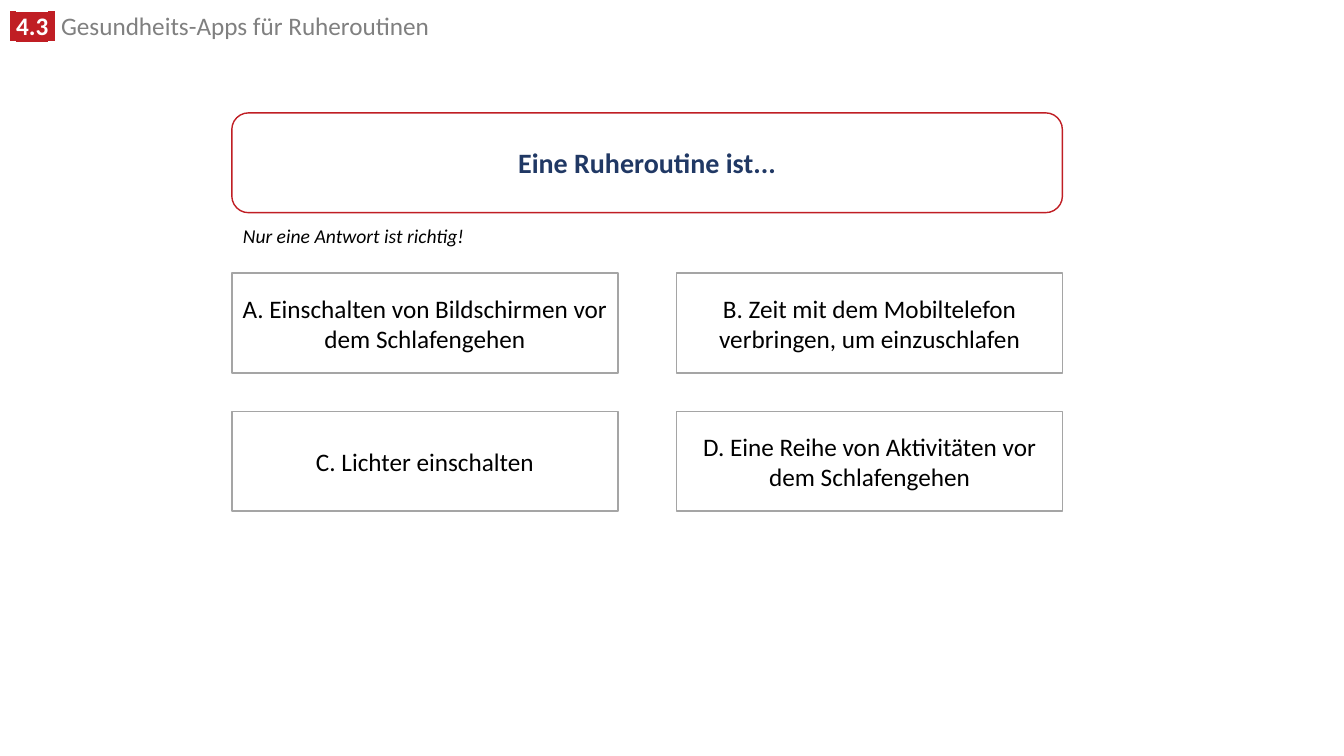
"""Build a quiz slide with one question and four possible answers."""
from lxml.etree import SubElement
from pptx import Presentation
from pptx.dml.color import RGBColor
from pptx.enum.shapes import MSO_SHAPE as Preset
from pptx.enum.text import MSO_ANCHOR as Anchor, MSO_AUTO_SIZE as AutoSize, PP_ALIGN as Align
from pptx.oxml.ns import qn
from pptx.util import Inches, Pt

COLORS = {
    "white": "FFFFFF", "black": "000000", "red": "C01E24",
    "navy": "203864", "gray": "808080", "border": "A5A5A5",
}
FORMATS = {
    "badge": {"color": "white", "size": Pt(18), "bold": True},
    "title": {"color": "gray", "size": Pt(18), "bold": False},
    "question": {"color": "navy", "size": Pt(20), "bold": True},
    "answer": {"color": "black", "size": Pt(18)},
    "note": {"color": "black", "size": Pt(14), "italic": True},
}
TITLE_RUNS = [
    (" ", "badge", "Lato"),
    ("4.3", "badge", "Calibri"),
    (" ", "badge", "Lato"),
    (" ", "title", "Lato"),
    ("Gesundheits-Apps für Ruheroutinen", "title", "Calibri"),
]
ANSWERS = [
    "A. Einschalten von Bildschirmen vor dem Schlafengehen",
    "B. Zeit mit dem Mobiltelefon verbringen, um einzuschlafen",
    "C. Lichter einschalten",
    "D. Eine Reihe von Aktivitäten vor dem Schlafengehen",
]
LEFT, QUESTION_TOP, ANSWER_TOP = 17.25, 14.93, 36.13
QUESTION_WIDTH, ANSWER_WIDTH, BOX_HEIGHT = 61.8, 28.73, 13.2
COLUMN_STEP, ROW_STEP = 33.09, 18.27


class QuizSlide:
    """Draws styled elements placed in percent of the slide size."""

    def __init__(self, presentation):
        self.width = presentation.slide_width
        self.height = presentation.slide_height
        self.slide = presentation.slides.add_slide(presentation.slide_layouts[5])

    def frame(self, left, top, width, height):
        return (
            int(self.width * left / 100), int(self.height * top / 100),
            int(self.width * width / 100), int(self.height * height / 100),
        )

    def run(self, paragraph, text, style, typeface="Calibri"):
        run = paragraph.add_run()
        run.text = text
        run.font.name = typeface
        for name, value in FORMATS[style].items():
            if name == "color":
                run.font.color.rgb = RGBColor.from_string(COLORS[value])
            else:
                setattr(run.font, name, value)
        return run

    def highlight(self, run, color):
        properties = run.font._element
        mark = SubElement(properties, qn("a:highlight"))
        SubElement(mark, qn("a:srgbClr"), val=COLORS[color])
        properties.find(qn("a:solidFill")).addnext(mark)

    def title(self, runs, *place):
        shape = self.slide.shapes.title
        shape.left, shape.top, shape.width, shape.height = self.frame(*place)
        text_frame = shape.text_frame
        text_frame.vertical_anchor = Anchor.TOP
        text_frame.auto_size = AutoSize.SHAPE_TO_FIT_TEXT
        paragraph = text_frame.paragraphs[0]
        paragraph.alignment = Align.LEFT
        paragraph.line_spacing = 0.8
        paragraph.space_before = Pt(0)
        for text, style, typeface in runs:
            run = self.run(paragraph, text, style, typeface)
            if style == "badge":
                self.highlight(run, "red")

    def box(self, preset, text, style, border, *place):
        shape = self.slide.shapes.add_shape(preset, *self.frame(*place))
        shape.shadow.inherit = False
        shape.fill.solid()
        shape.fill.fore_color.rgb = RGBColor.from_string(COLORS["white"])
        shape.line.color.rgb = RGBColor.from_string(COLORS[border])
        shape.line.width = Pt(1)
        shape.text_frame.vertical_anchor = Anchor.MIDDLE
        paragraph = shape.text_frame.paragraphs[0]
        paragraph.alignment = Align.CENTER
        self.run(paragraph, text, style)

    def note(self, text, *place):
        shape = self.slide.shapes.add_textbox(*self.frame(*place))
        shape.text_frame.word_wrap = False
        shape.text_frame.auto_size = AutoSize.SHAPE_TO_FIT_TEXT
        self.run(shape.text_frame.paragraphs[0], text, "note")


def main():
    presentation = Presentation()
    presentation.slide_width = Inches(13.33)
    presentation.slide_height = Inches(7.5)
    quiz = QuizSlide(presentation)
    quiz.title(TITLE_RUNS, 0, 1.47, 71.42, 4.67)
    quiz.box(Preset.ROUNDED_RECTANGLE, "Eine Ruheroutine ist...", "question", "red",
             LEFT, QUESTION_TOP, QUESTION_WIDTH, BOX_HEIGHT)
    for index, answer in enumerate(ANSWERS):
        row, column = divmod(index, 2)
        quiz.box(Preset.RECTANGLE, answer, "answer", "border",
                 LEFT + column * COLUMN_STEP, ANSWER_TOP + row * ROW_STEP,
                 ANSWER_WIDTH, BOX_HEIGHT)
    quiz.note("Nur eine Antwort ist richtig!", 17.33, 28.93, 18.15, 4.53)
    presentation.save("out.pptx")


if __name__ == "__main__":
    main()
